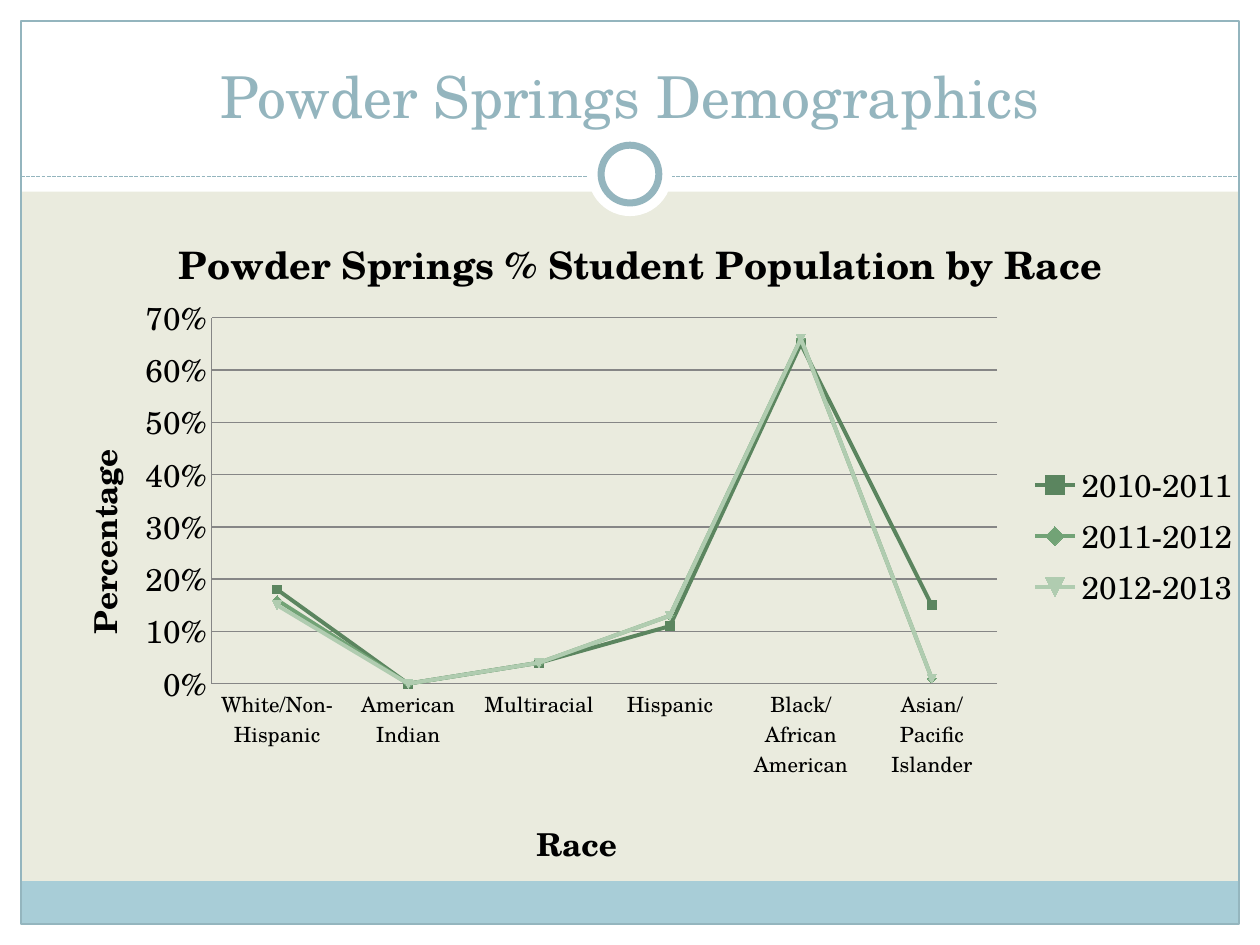
from dataclasses import dataclass

from lxml import etree
from pptx import Presentation
from pptx.chart.data import CategoryChartData
from pptx.dml.color import RGBColor
from pptx.enum.chart import XL_CHART_TYPE, XL_LEGEND_POSITION, XL_TICK_MARK
from pptx.enum.dml import MSO_LINE
from pptx.enum.shapes import MSO_CONNECTOR, MSO_SHAPE
from pptx.enum.text import MSO_ANCHOR, PP_ALIGN
from pptx.oxml.ns import qn
from pptx.util import Pt

LINES = XL_CHART_TYPE.LINE_MARKERS
RIGHT = XL_LEGEND_POSITION.RIGHT
NO_TICK = XL_TICK_MARK.NONE
DASH = MSO_LINE.SQUARE_DOT
STRAIGHT = MSO_CONNECTOR.STRAIGHT
RECT, OVAL = MSO_SHAPE.RECTANGLE, MSO_SHAPE.OVAL
BOTTOM, CENTER = MSO_ANCHOR.BOTTOM, PP_ALIGN.CENTER


@dataclass
class Theme:
    font: str = "TeX Gyre Schola"
    paper: str = "EAEBDE"
    white: str = "FFFFFF"
    band: str = "A8CDD7"
    accent: str = "94B5BE"
    ink: str = "000000"
    grid: str = "868686"
    series: tuple = ("5B855F", "72A376", "B0CCB0")
    title: float = 33
    head: float = 21.6
    body: float = 18
    small: float = 12


THEME = Theme()
RACES = ["White/Non-Hispanic", "American Indian", "Multiracial", "Hispanic",
         "Black/African American", "Asian/Pacific Islander"]
YEARS = {
    "2010-2011": (0.18, 0, 0.04, 0.11, 0.65, 0.15),
    "2011-2012": (0.16, 0, 0.04, 0.13, 0.66, 0.01),
    "2012-2013": (0.15, 0, 0.04, 0.13, 0.66, 0.01),
}


def style(font, size=THEME.body, color=THEME.ink, bold=False):
    font.name, font.size, font.bold = THEME.font, Pt(size), bold
    font.color.rgb = RGBColor.from_string(color)


def write(frame, text, align=CENTER, **look):
    para = frame.paragraphs[0]
    para.alignment = align
    run = para.add_run()
    run.text = text
    style(run.font, **look)


def stroke(line, color, width=0.75):
    line.color.rgb = RGBColor.from_string(color)
    line.width = Pt(width)


def shape(slide, kind, box, fill=None, line=None, width=0.75):
    item = slide.shapes.add_shape(kind, *map(Pt, box))
    item.shadow.inherit = False
    if fill:
        item.fill.solid()
        item.fill.fore_color.rgb = RGBColor.from_string(fill)
    else:
        item.fill.background()
    if line:
        stroke(item.line, line, width)
    else:
        item.line.fill.background()


def place(node, index, inner=False, **spots):
    """Set a chart part's position as fractions of the chart."""
    for old in node.findall(qn("c:layout")):
        node.remove(old)
    layout = etree.Element(qn("c:layout"))
    manual = etree.SubElement(layout, qn("c:manualLayout"))
    if inner:
        etree.SubElement(manual, qn("c:layoutTarget")).set("val", "inner")
    for key in ("x", "y"):
        etree.SubElement(manual, qn(f"c:{key}Mode")).set("val", "edge")
    for key, value in spots.items():
        etree.SubElement(manual, qn(f"c:{key}")).set("val", str(value))
    node.insert(index, layout)


def draw_frame(slide, box):
    left, top, wide, high = box
    edge, head = 12, 109.5
    # White margins
    for part in ((left, top + high - edge, wide, edge), (left, top, wide, head),
                 (left, top, edge, high), (left + wide - edge, top, edge, high)):
        shape(slide, RECT, part, THEME.white)
    # Footer band and border
    span = wide - 2 * edge
    shape(slide, RECT, (left + edge, top + 503.5, span, 24.5), THEME.band)
    shape(slide, RECT, (left + edge, top + edge, span, high - 2 * edge),
          line=THEME.accent)
    # Dashed rule
    rule = slide.shapes.add_connector(
        STRAIGHT, Pt(left + edge), Pt(top + 101),
        Pt(left + wide - edge), Pt(top + 101))
    stroke(rule.line, THEME.accent)
    rule.line.dash_style = DASH
    etree.SubElement(rule._element.spPr, qn("a:effectLst"))
    # Ring on the rule
    mid, axis = left + wide / 2, top + 99.5
    for size, line in ((48, None), (33, THEME.accent)):
        shape(slide, OVAL, (mid - size / 2, axis - size / 2, size, size),
              THEME.white, line, 4)


def draw_title(slide, box, text):
    title = slide.shapes.title
    title.left, title.top, title.width, title.height = map(Pt, box)
    title.text_frame.vertical_anchor = BOTTOM
    title.text_frame.word_wrap = True
    write(title.text_frame, text, size=THEME.title, color=THEME.accent)
    # Bring the title in front of the frame
    slide.shapes._spTree.append(title._element)


def name_part(title, text, size, x, y):
    write(title.text_frame, text, size=size, bold=True)
    place(title._element, 1, x=x, y=y)


def draw_chart(slide, box):
    data = CategoryChartData(number_format="0%")
    data.categories = RACES
    for year, values in YEARS.items():
        data.add_series(year, values)
    chart = slide.shapes.add_chart(LINES, *map(Pt, box), data).chart
    style(chart.font)
    plot = chart.plots[0]
    plot.vary_by_categories = False
    place(chart._chartSpace.chart.plotArea, 0, inner=True,
          x=0.148, y=0.186, w=0.645, h=0.528)

    # Series
    for series, color in zip(plot.series, THEME.series):
        series.smooth = False
        stroke(series.format.line, color, 2.25)
        mark = series.marker
        mark.size = 5
        mark.format.fill.solid()
        mark.format.fill.fore_color.rgb = RGBColor.from_string(color)
        stroke(mark.format.line, color)

    # Axes
    races, share = chart.category_axis, chart.value_axis
    for axis, size in ((races, THEME.small), (share, THEME.body)):
        axis.major_tick_mark = axis.minor_tick_mark = NO_TICK
        style(axis.tick_labels.font, size=size)
        stroke(axis.format.line, THEME.grid)
    share.minimum_scale, share.maximum_scale, share.major_unit = 0, 0.7, 0.1
    share.tick_labels.number_format = "0%"
    share.tick_labels.number_format_is_linked = False
    stroke(share.major_gridlines.format.line, THEME.grid)

    # Titles and legend
    chart.has_title = True
    name_part(chart.chart_title, "Powder Springs % Student Population by Race",
              THEME.head, 0.115, 0.05)
    name_part(races.axis_title, "Race", THEME.body, 0.41, 0.897)
    name_part(share.axis_title, "Percentage", THEME.body, 0.033, 0.367)
    turn = share.axis_title.text_frame._txBody.bodyPr
    turn.set("rot", "-5400000")
    turn.set("vert", "horz")
    chart.has_legend = True
    chart.legend.position = RIGHT
    chart.legend.include_in_layout = False
    style(chart.legend.font)
    place(chart.legend._element, 1, x=0.815, y=0.387, w=0.18, h=0.228)


def main():
    deck = Presentation()
    deck.slide_width, deck.slide_height = Pt(720), Pt(540)
    slide = deck.slides.add_slide(deck.slide_layouts[5])
    slide.background.fill.solid()
    slide.background.fill.fore_color.rgb = RGBColor.from_string(THEME.paper)
    draw_frame(slide, (0, 0, 720, 540))
    draw_title(slide, (24, 18, 672, 60), "Powder Springs Demographics")
    draw_chart(slide, (18, 108, 696, 396))
    deck.save("out.pptx")


if __name__ == "__main__":
    main()
